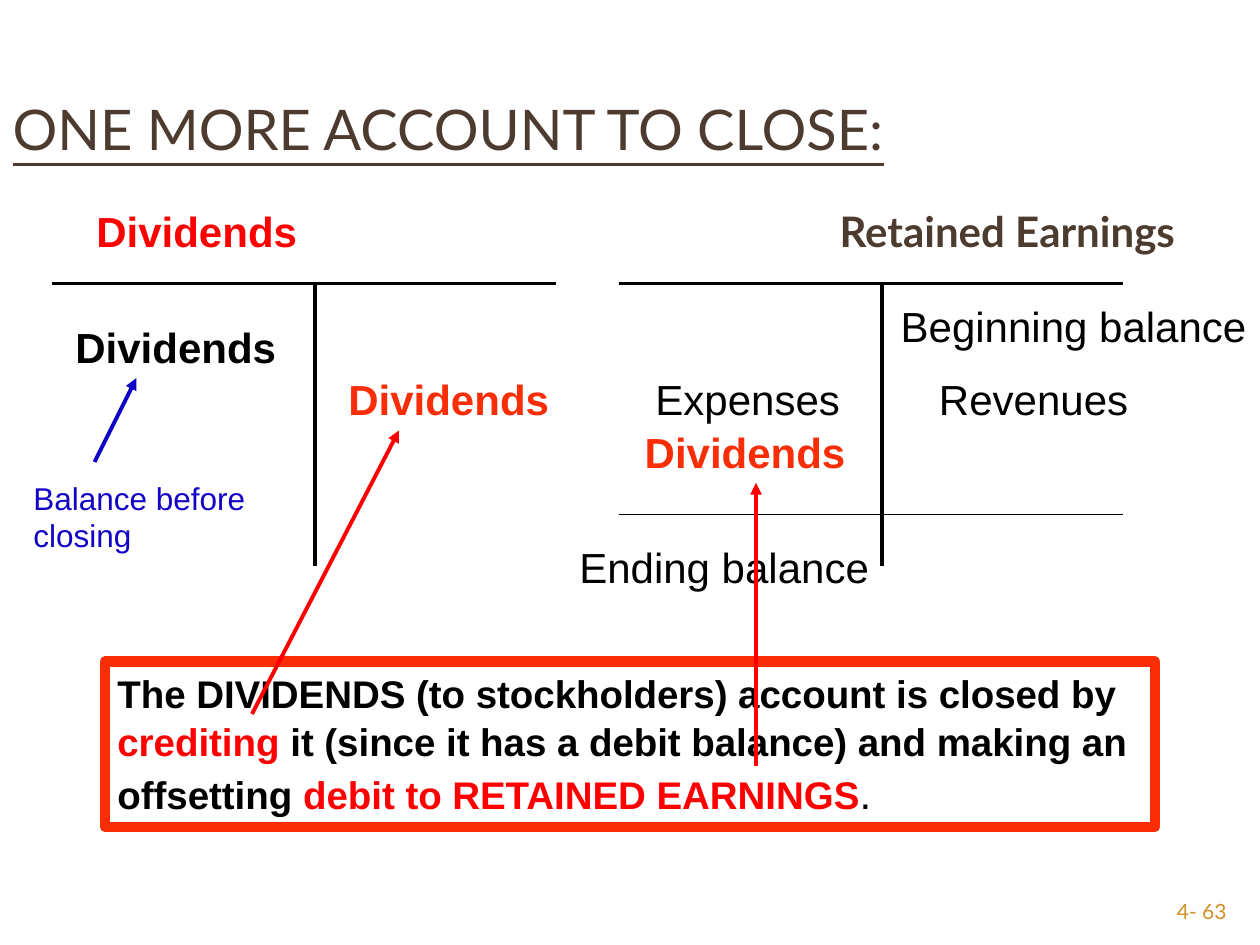
from dataclasses import dataclass

from lxml import etree
from pptx import Presentation
from pptx.dml.color import RGBColor
from pptx.enum.shapes import MSO_CONNECTOR, MSO_SHAPE
from pptx.enum.text import MSO_ANCHOR, MSO_AUTO_SIZE, PP_ALIGN
from pptx.oxml.ns import qn
from pptx.util import Pt

BLACK = RGBColor(0x00, 0x00, 0x00)
RED = RGBColor(0xFF, 0x00, 0x00)
ORANGE = RGBColor(0xF9, 0x2E, 0x06)
BLUE = RGBColor(0x12, 0x04, 0xC6)
BROWN = RGBColor(0x4E, 0x3B, 0x30)
GOLD = RGBColor(0xD4, 0x8F, 0x29)

LEFT, RIGHT = PP_ALIGN.LEFT, PP_ALIGN.RIGHT
TOP, BOTTOM = MSO_ANCHOR.TOP, MSO_ANCHOR.BOTTOM
NO_FIT = MSO_AUTO_SIZE.NONE
STRAIGHT, RECT = MSO_CONNECTOR.STRAIGHT, MSO_SHAPE.RECTANGLE


@dataclass
class Label:
    text: str
    left: float
    top: float
    width: float
    color: RGBColor = BLACK
    bold: bool = False
    size: float = 24
    height: float = 36
    font: str = "Arial"
    align: PP_ALIGN = LEFT
    wrap: bool = True


@dataclass
class Line:
    x1: float
    y1: float
    x2: float
    y2: float
    color: RGBColor = BLACK
    width: float = 2.25
    arrow: bool = False


def place(sp, left: float, top: float, width: float, height: float) -> None:
    sp.left, sp.top, sp.width, sp.height = map(Pt, (left, top, width, height))


def add_text(p, text: str, *, size: float = 24, color: RGBColor = BLACK,
             font: str = "Arial", bold: bool = False, underline: bool = False) -> None:
    r = p.add_run()
    r.text = text
    f = r.font
    f.name, f.size, f.bold, f.underline = font, Pt(size), bold, underline
    f.color.rgb = color


def setup_frame(sp, anchor=TOP, align=LEFT, wrap: bool = True):
    """Set the frame's layout and return its first paragraph."""
    tf = sp.text_frame
    tf.word_wrap, tf.auto_size, tf.vertical_anchor = wrap, NO_FIT, anchor
    p = tf.paragraphs[0]
    p.alignment, p.space_before = align, Pt(0)
    return p


def add_label(s, label: Label) -> None:
    sp = s.shapes.add_textbox(Pt(label.left), Pt(label.top), Pt(label.width), Pt(label.height))
    p = setup_frame(sp, align=label.align, wrap=label.wrap)
    add_text(p, label.text, size=label.size, color=label.color, font=label.font, bold=label.bold)


def add_line(s, line: Line) -> None:
    cx = s.shapes.add_connector(STRAIGHT, Pt(line.x1), Pt(line.y1), Pt(line.x2), Pt(line.y2))
    cx.line.color.rgb, cx.line.width = line.color, Pt(line.width)
    if line.arrow:
        etree.SubElement(cx.line._get_or_add_ln(), qn("a:tailEnd"), type="triangle")
    etree.SubElement(cx._element.spPr, qn("a:effectLst"))


def add_t_account(s, left: float, stem_x: float) -> None:
    add_line(s, Line(left, 162, left + 288, 162))
    add_line(s, Line(stem_x, 162, stem_x, 323.3))


LABELS = [
    Label("4- 63", 648, 510, 60, GOLD, size=12, height=19.5, font="Lato", align=RIGHT),
    # Dividends account
    Label("Dividends", 48, 114, 270, RED, bold=True),
    Label("Dividends", 36, 180, 132, bold=True),
    Label("Dividends", 192, 210, 132, ORANGE, bold=True),
    Label("Balance before closing", 12, 270, 138, BLUE, size=18, height=55.5),
    # Retained Earnings account
    Label("Beginning balance", 507.6, 168, 212.4, wrap=False),
    Label("Revenues", 529.5, 210, 136),
    Label("Expenses", 367.5, 210, 125),
    Label("Dividends", 361.3, 240, 131, ORANGE, bold=True),
    Label("Ending balance", 324, 306, 180, wrap=False),
]

ARROWS = [
    Line(54, 264, 78, 216, BLUE, arrow=True),
    Line(144, 408, 228, 246, RED, arrow=True),
    Line(432, 438, 432, 276, RED, arrow=True),
]

EXPLANATION = [
    ("The DIVIDENDS (to stockholders) account is closed by ", BLACK),
    ("crediting", RED),
    (" it (since it has a debit balance) and making an offsetting ", BLACK),
    ("debit to RETAINED EARNINGS", RED),
]


def main() -> None:
    prs = Presentation()
    prs.slide_width, prs.slide_height = Pt(720), Pt(540)
    s = prs.slides.add_slide(prs.slide_layouts[1])

    # Title and account heading
    title, body = s.shapes.title, s.placeholders[1]
    place(title, 0, 36, 540, 60)
    add_text(setup_frame(title, BOTTOM), "ONE MORE ACCOUNT TO CLOSE:",
             size=32, color=BROWN, font="Lato", underline=True)
    place(body, 472.6, 114, 247.4, 42)
    p = setup_frame(body)
    pPr = p._p.get_or_add_pPr()
    pPr.set("marL", "0")
    pPr.set("indent", "0")
    etree.SubElement(pPr, qn("a:buNone"))
    add_text(p, "Retained Earnings", color=BROWN, font="Lato", bold=True)

    # T-accounts and the rule above the ending balance
    add_t_account(s, 30, 180)
    add_t_account(s, 354, 504)
    add_line(s, Line(354, 294, 642, 294, width=1))
    for label in LABELS:
        add_label(s, label)

    # Explanation box
    sp = s.shapes.add_shape(RECT, Pt(60), Pt(378), Pt(600), Pt(94.5))
    sp.shadow.inherit = False
    sp.fill.background()
    sp.line.color.rgb, sp.line.width = ORANGE, Pt(6)
    p = setup_frame(sp)
    p.line_spacing = 1.05
    for text, color in EXPLANATION:
        add_text(p, text, size=22, color=color, bold=True)
    add_text(p, ".")

    # Arrows
    for arrow in ARROWS:
        add_line(s, arrow)

    prs.save("out.pptx")


if __name__ == "__main__":
    main()
